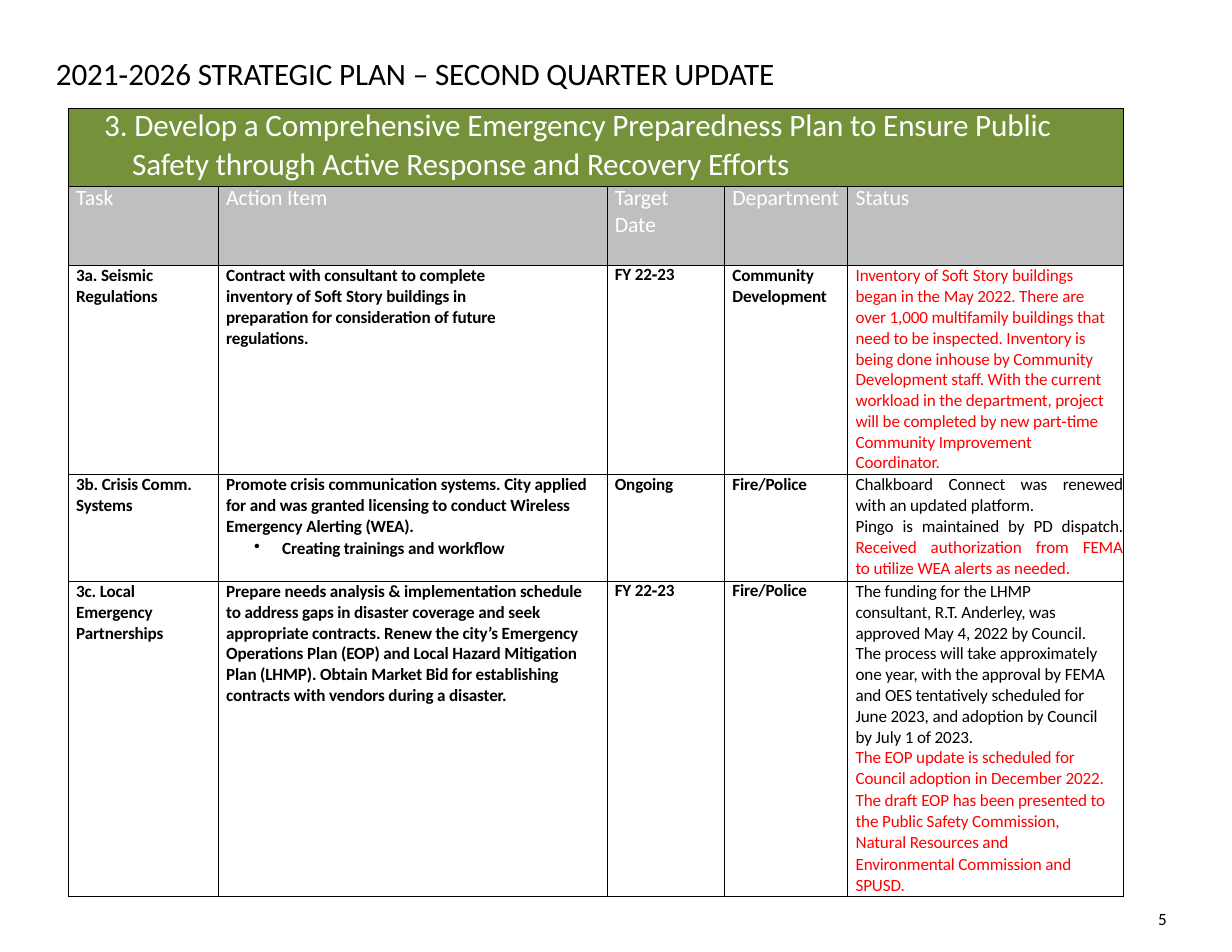
import pptx
import pptx.util
import pptx.dml.color
import pptx.enum.text
import pptx.oxml
import pptx.oxml.ns
from dataclasses import dataclass
from pptx.util import Inches

COLOURS = {"black": "000000", "white": "FFFFFF", "red": "FF0000",
           "green": "75923B", "grey": "BFBFBF"}
FONT = "Calibri"
COLUMN_WIDTHS = [1.34, 3.47, 1.05, 1.1, 2.46]
ROW_HEIGHTS = [0.69, 0.71, 1.87, 0.95, 2.8]
CELL_INDENT = 0.07


@dataclass
class Line:
    """A paragraph; wording holds (text, colour) pairs and \\n is a line break."""
    wording: list
    size: float = 11
    bold: bool = False
    indent: float = CELL_INDENT
    leading: float = 0
    before: float = 0
    bullet: bool = False
    justify: bool = False


def bold(text, **options):
    return Line([(text, "black")], bold=True, **options)


def black(text, **options):
    return Line([(text, "black")], **options)


def red(text, **options):
    return Line([(text, "red")], **options)


def white(text, size, **options):
    return Line([(text, "white")], size=size, **options)


BANNER = [
    white("3. Develop a Comprehensive Emergency Preparedness Plan to Ensure Public",
          20, indent=0.32, leading=23.3),
    white("Safety through Active Response and Recovery Efforts",
          20, indent=0.57, leading=24.4, before=0.4),
]
HEADINGS = ["Task", "Action Item", "Target\nDate", "Department", "Status"]
TASKS = [
    # 3a
    [[bold("3a. Seismic\nRegulations")],
     [bold("Contract with consultant to complete\ninventory of Soft Story buildings in"),
      bold("preparation for consideration of future\nregulations.")],
     [bold("FY 22‐23")],
     [bold("Community\nDevelopment")],
     [red("Inventory of Soft Story buildings\nbegan in the May 2022. There are"),
      red("over 1,000 multifamily buildings that\nneed to be inspected. Inventory is"),
      red("being done inhouse by Community\nDevelopment staff. With the current\n"
          "workload in the department, project"),
      red("will be completed by new part‐time\nCommunity Improvement"),
      red("Coordinator.")]],
    # 3b
    [[bold("3b. Crisis Comm.\nSystems")],
     [bold("Promote crisis communication systems. City applied\n"
           "for and was granted licensing to conduct Wireless\n"
           "Emergency Alerting (WEA)."),
      bold("Creating trainings and workflow", indent=0.57, leading=13.4,
           before=0.5, bullet=True)],
     [bold("Ongoing")],
     [bold("Fire/Police")],
     [black("Chalkboard Connect was renewed\nwith an updated platform.", justify=True),
      Line([("Pingo is maintained by PD dispatch.\n", "black"),
            ("Received authorization from FEMA\nto utilize WEA alerts as needed.", "red")],
           justify=True)]],
    # 3c
    [[bold("3c. Local\nEmergency\nPartnerships")],
     [bold("Prepare needs analysis & implementation schedule\n"
           "to address gaps in disaster coverage and seek\n"
           "appropriate contracts. Renew the city’s Emergency\n"
           "Operations Plan (EOP) and Local Hazard Mitigation"),
      bold("Plan (LHMP). Obtain Market Bid for establishing\n"
           "contracts with vendors during a disaster.")],
     [bold("FY 22‐23")],
     [bold("Fire/Police")],
     [black("The funding for the LHMP\nconsultant, R.T. Anderley, was\n"
            "approved May 4, 2022 by Council.\nThe process will take approximately"),
      black("one year, with the approval by FEMA\nand OES tentatively scheduled for"),
      black("June 2023, and adoption by Council\nby July 1 of 2023."),
      red("The EOP update is scheduled for", leading=13),
      red("Council adoption in December 2022.\nThe draft EOP has been presented to\n"
          "the Public Safety Commission,\nNatural Resources and\n"
          "Environmental Commission and\nSPUSD.", leading=13.7)]],
]


def rgb(name):
    return pptx.dml.color.RGBColor.from_string(COLOURS[name])


def write_span(para, text, colour):
    span = para.add_run()
    span.text = text
    span.font.color.rgb = rgb(colour)
    span.font.size = para.font.size
    span.font.name = FONT
    span.font.bold = para.font.bold
    span.font._element.set("spc", "-10")


def write_line(para, line):
    para.font.name = FONT
    para.font.size = pptx.util.Pt(line.size)
    para.font.bold = line.bold
    para.space_before = pptx.util.Pt(line.before)
    if line.justify:
        para.alignment = pptx.enum.text.PP_ALIGN.JUSTIFY
    # Single lines sit slightly tighter than wrapped ones
    wrapped = any("\n" in text for text, colour in line.wording)
    para.line_spacing = pptx.util.Pt(line.leading or (13.4 if wrapped else 12.9))
    properties = para._p.get_or_add_pPr()
    properties.set("marL", str(Inches(line.indent)))
    properties.set("indent", str(Inches(-0.25 if line.bullet else 0)))
    if line.bullet:
        bullet = pptx.oxml.parse_xml(
            f'<a:buChar {pptx.oxml.ns.nsdecls("a")} char="•"/>')
        properties.insert_element_before(bullet, "a:tabLst", "a:defRPr", "a:extLst")
    for text, colour in line.wording:
        for index, piece in enumerate(text.split("\n")):
            if index:
                para.add_line_break()
            if piece:
                write_span(para, piece, colour)


def write_lines(frame, lines):
    for index, line in enumerate(lines):
        para = frame.add_paragraph() if index else frame.paragraphs[0]
        write_line(para, line)


def clear_margins(holder):
    holder.margin_left = holder.margin_right = 0
    holder.margin_top = holder.margin_bottom = 0


def add_text(page, left, top, width, height, line):
    box = page.shapes.add_textbox(Inches(left), Inches(top), Inches(width), Inches(height))
    box.text_frame.word_wrap = True
    clear_margins(box.text_frame)
    write_lines(box.text_frame, [line])


def style_cell(cell, fill):
    clear_margins(cell)
    properties = cell._tc.get_or_add_tcPr()
    for side in "LRTB":
        properties.append(pptx.oxml.parse_xml(
            f'<a:ln{side} {pptx.oxml.ns.nsdecls("a")} w="6350"><a:solidFill>'
            f'<a:srgbClr val="{COLOURS["black"]}"/></a:solidFill></a:ln{side}>'))
    if fill:
        cell.fill.solid()
        cell.fill.fore_color.rgb = rgb(fill)
    else:
        cell.fill.background()


def add_plan_table(page):
    frame = page.shapes.add_table(
        len(ROW_HEIGHTS), len(COLUMN_WIDTHS), Inches(0.61), Inches(0.97),
        Inches(sum(COLUMN_WIDTHS)), Inches(sum(ROW_HEIGHTS)))
    table = frame.table
    table.first_row = table.horz_banding = False
    for column, width in zip(table.columns, COLUMN_WIDTHS):
        column.width = Inches(width)
    for row, height in zip(table.rows, ROW_HEIGHTS):
        row.height = Inches(height)

    # Banner across the top, then headings, then one row per task
    table.cell(0, 0).merge(table.cell(0, len(COLUMN_WIDTHS) - 1))
    headings = [[white(word, 14, leading=17.4 if index else 16.4)
                 for index, word in enumerate(text.split("\n"))] for text in HEADINGS]
    rows = [[BANNER] + [[]] * (len(COLUMN_WIDTHS) - 1), headings] + TASKS
    for row, (cells, fill) in enumerate(zip(rows, ["green", "grey", None, None, None])):
        for column, lines in enumerate(cells):
            cell = table.cell(row, column)
            style_cell(cell, fill)
            write_lines(cell.text_frame, lines)


def main():
    deck = pptx.Presentation()
    deck.slide_width, deck.slide_height = Inches(11), Inches(8.5)
    page = deck.slides.add_slide(deck.slide_layouts[6])

    # Page number and title
    add_text(page, 10.3, 8.14, 0.24, 0.18, black("5", indent=0.04, leading=11.4))
    add_text(page, 0.49, 0.48, 6.8, 0.36,
             black("2021‐2026 STRATEGIC PLAN – SECOND QUARTER UPDATE",
                   size=20, indent=0.01, leading=24.4, before=0.9))
    add_plan_table(page)
    deck.save("out.pptx")


if __name__ == "__main__":
    main()
